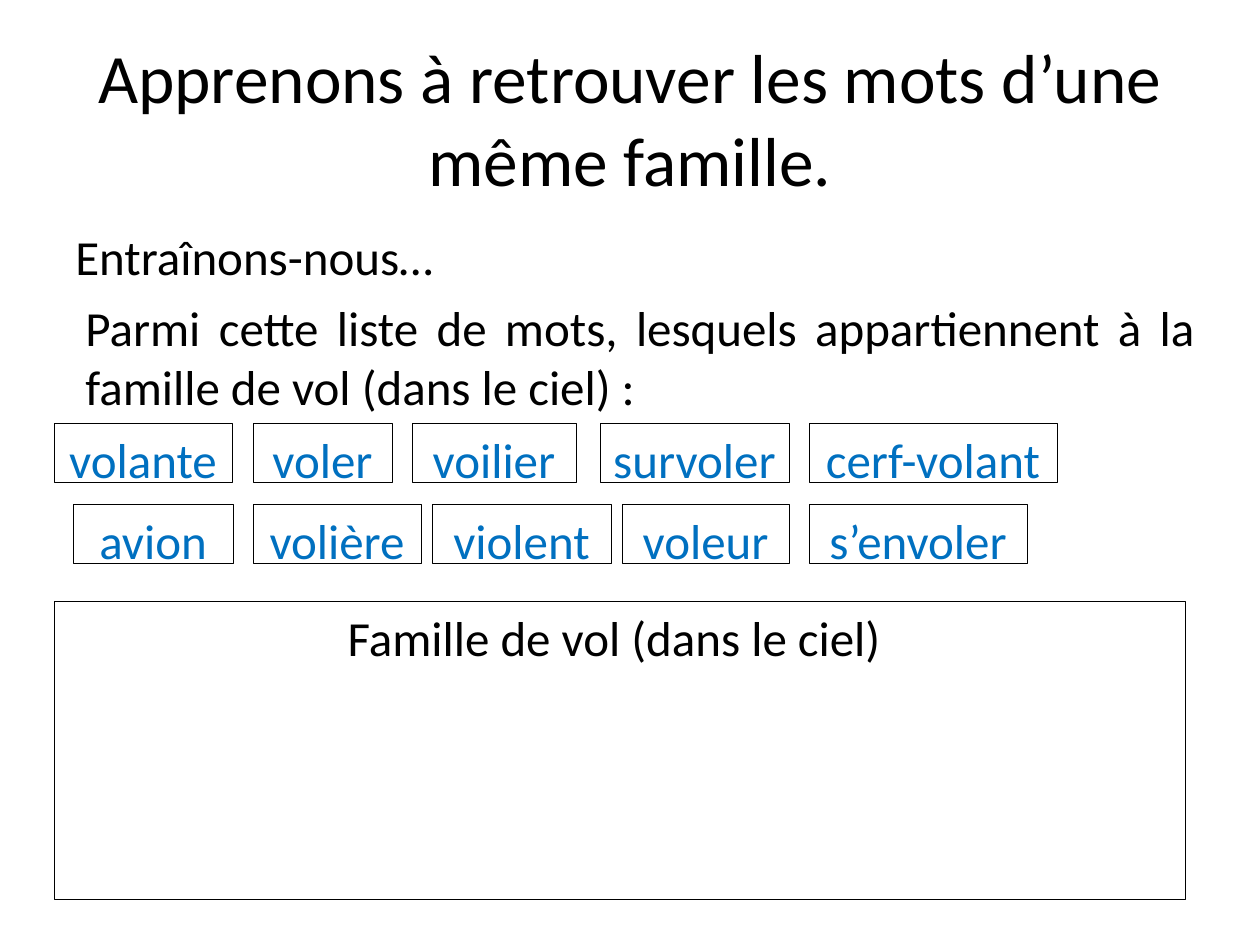
from lxml import etree
from pptx import Presentation
from pptx.dml.color import RGBColor
from pptx.enum.shapes import MSO_SHAPE
from pptx.enum.text import MSO_ANCHOR, PP_ALIGN
from pptx.oxml.ns import qn
from pptx.util import Emu, Pt

RECT = MSO_SHAPE.RECTANGLE
TOP, MIDDLE = MSO_ANCHOR.TOP, MSO_ANCHOR.MIDDLE
CENTER, JUSTIFY = PP_ALIGN.CENTER, PP_ALIGN.JUSTIFY

PX_PER_INCH = 126
COLORS = {"text": "000000", "word": "0070C0", "line": "000000"}

WORD_HEIGHT = 59
# top of the row, then (word, left, width) for each label
WORD_ROWS = [
    (423, [("volante", 54, 178), ("voler", 253, 139), ("voilier", 412, 164),
           ("survoler", 600, 189), ("cerf-volant", 809, 248)]),
    (504, [("avion", 73, 160), ("volière", 253, 168), ("violent", 432, 179),
           ("voleur", 622, 167), ("s’envoler", 809, 218)]),
]


def px(n):
    return Emu(round(n * 914400 / PX_PER_INCH))


def set_space_before(p, percent):
    """Set paragraph spacing as a share of the line, which needs XML."""
    spacing = etree.Element(qn("a:spcBef"))
    etree.SubElement(spacing, qn("a:spcPct"), val=str(percent * 1000))
    p._p.get_or_add_pPr().insert(0, spacing)


class Deck:
    font = "Calibri"
    body_size = 28
    title_size = 39.6

    def __init__(self, width, height):
        self.prs = Presentation()
        self.prs.slide_width, self.prs.slide_height = px(width), px(height)
        self.s = self.prs.slides.add_slide(self.prs.slide_layouts[5])

    def fill_text(self, sp, text, size, color, align, anchor=TOP):
        tf = sp.text_frame
        tf.text = text
        tf.word_wrap = True
        tf.vertical_anchor = anchor
        p = tf.paragraphs[0]
        p.alignment = align
        r = p.runs[0]
        r.font.name = self.font
        r.font.size = Pt(size)
        r.font.color.rgb = RGBColor.from_string(COLORS[color])
        return p

    def title(self, text, x, y, w, h):
        sp = self.s.shapes.title
        sp.left, sp.top, sp.width, sp.height = map(px, (x, y, w, h))
        self.fill_text(sp, text, self.title_size, "text", CENTER, MIDDLE)

    def text(self, text, x, y, w, h):
        sp = self.s.shapes.add_textbox(*map(px, (x, y, w, h)))
        p = self.fill_text(sp, text, self.body_size, "text", JUSTIFY)
        set_space_before(p, 20)

    def box(self, text, x, y, w, h, color="text"):
        sp = self.s.shapes.add_shape(RECT, *map(px, (x, y, w, h)))
        sp.shadow.inherit = False
        sp.fill.background()
        sp.line.color.rgb = RGBColor.from_string(COLORS["line"])
        sp.line.width = Pt(0.25)
        p = self.fill_text(sp, text, self.body_size, color, CENTER)
        set_space_before(p, 20)


def main():
    deck = Deck(1260, 945)
    deck.title("Apprenons à retrouver les mots d’une même famille.",
               63, 38, 1134, 158)
    deck.text("Entraînons-nous…", 63, 220, 1134, 83)
    deck.text("Parmi cette liste de mots, lesquels appartiennent à la "
              "famille de vol (dans le ciel) :", 73, 291, 1134, 122)
    for top, words in WORD_ROWS:
        for word, left, width in words:
            deck.box(word, left, top, width, WORD_HEIGHT, "word")
    deck.box("Famille de vol (dans le ciel) ", 54, 601, 1131, 298)
    deck.prs.save("out.pptx")


if __name__ == "__main__":
    main()
